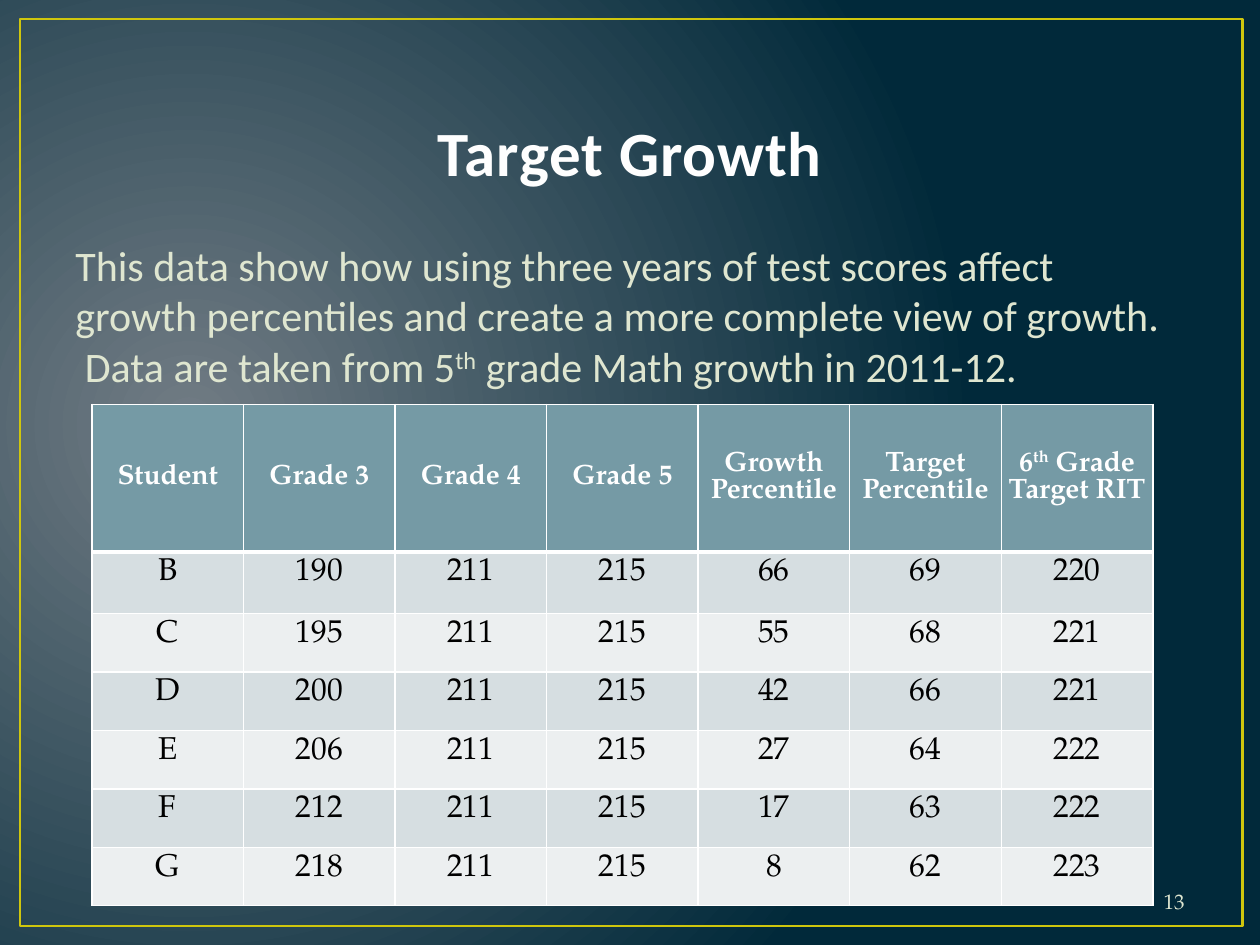
import pptx
import pptx.util
import pptx.dml.color
import pptx.enum.shapes
import pptx.enum.text
import pptx.oxml.ns
import lxml.etree

Inches, Pt = pptx.util.Inches, pptx.util.Pt
ALIGN, ANCHOR = pptx.enum.text.PP_ALIGN, pptx.enum.text.MSO_ANCHOR
qn = pptx.oxml.ns.qn

# A text is a list of (words, is_superscript) runs.
TITLE = [("Target Growth", False)]
INTRO = [
    ("This data show how using three years of test scores affect growth percentiles "
     "and create a more complete view of growth.  Data are taken from 5", False),
    ("th", True),
    (" grade Math growth in 2011-12.", False),
]
PAGE_NUMBER = [("13", False)]
HEADINGS = [[(name, False)] for name in (
    "Student", "Grade 3", "Grade 4", "Grade 5", "Growth Percentile", "Target Percentile")]
HEADINGS.append([("6", False), ("th", True), (" Grade Target RIT", False)])
STUDENTS = [
    ("B", 190, 211, 215, 66, 69, 220),
    ("C", 195, 211, 215, 55, 68, 221),
    ("D", 200, 211, 215, 42, 66, 221),
    ("E", 206, 211, 215, 27, 64, 222),
    ("F", 212, 211, 215, 17, 63, 222),
    ("G", 218, 211, 215, 8, 62, 223),
]

THEME = {
    "glow": "717C84", "night": "01293A", "frame": "CFC60D",
    "title": "FEFEFE", "text": "DFE6D0", "heading": "FFFFFF", "value": "000000",
    "border": "FFFFFF", "heading_fill": "759AA5", "bands": ("D6DEE1", "ECEFF0"),
    "sans": "Calibri", "serif": "TeX Gyre Pagella",
    "title_size": 36, "intro_size": 24, "value_size": 18, "heading_size": 16, "page_size": 12,
}
TABLE_LEFT, TABLE_TOP, TABLE_WIDTH, TABLE_HEIGHT = 0.73, 3.21, 8.42, 3.98
HEADING_HEIGHT, FIRST_ROW_HEIGHT = 1.17, 0.49
CELL_MARGIN = 0.05


def rgb(color):
    return pptx.dml.color.RGBColor.from_string(color)


def add_node(parent, tag, **attributes):
    return lxml.etree.SubElement(parent, qn(tag), attributes)


def write_text(frame, runs, font, size, color, bold=False, align=ALIGN.LEFT,
               anchor=ANCHOR.TOP, tracking=None, line_spacing=None):
    frame.word_wrap = True
    frame.vertical_anchor = anchor
    para = frame.paragraphs[0]
    para.alignment = align
    if line_spacing:
        para.line_spacing = Pt(line_spacing)
    for words, superscript in runs:
        span = para.add_run()
        span.text = words
        span.font.name, span.font.size, span.font.bold = font, Pt(size), bold
        span.font.color.rgb = rgb(color)
        properties = span.font._element
        if superscript:
            properties.set("baseline", "30000")
        if tracking:
            properties.set("spc", str(int(tracking * 100)))


def add_text(page, area, runs, **text_format):
    box = page.shapes.add_textbox(*map(Inches, area))
    write_text(box.text_frame, runs, **text_format)


def paint_background(page):
    """Radial gradient whose bright centre lies left of the middle."""
    page.background.fill.gradient()
    gradient = page.element.find(".//" + qn("a:gradFill"))
    for child in list(gradient):
        gradient.remove(child)
    stops = add_node(gradient, "a:gsLst")
    for position, color in (("0", THEME["glow"]), ("100000", THEME["night"])):
        add_node(add_node(stops, "a:gs", pos=position), "a:srgbClr", val=color)
    circle = add_node(gradient, "a:path", path="circle")
    add_node(circle, "a:fillToRect", l="15000", t="50000", r="85000", b="60000")


def add_frame(page):
    frame = page.shapes.add_shape(pptx.enum.shapes.MSO_SHAPE.RECTANGLE,
                                  *map(Inches, (0.16, 0.15, 9.7, 7.2)))
    frame.shadow.inherit = False
    frame.fill.background()
    frame.line.color.rgb = rgb(THEME["frame"])
    frame.line.width = Pt(1.5)


def draw_borders(cell, top=1, bottom=1):
    properties = cell._tc.get_or_add_tcPr()
    for side, width in (("L", 1), ("R", 1), ("T", top), ("B", bottom)):
        line = add_node(properties, "a:ln" + side, w=str(int(Pt(width))))
        add_node(add_node(line, "a:solidFill"), "a:srgbClr", val=THEME["border"])


def fill_cell(cell, runs, fill, top=1, bottom=1, **text_format):
    draw_borders(cell, top, bottom)
    cell.fill.solid()
    cell.fill.fore_color.rgb = rgb(fill)
    cell.margin_left = cell.margin_right = Inches(CELL_MARGIN)
    cell.margin_top = cell.margin_bottom = Inches(CELL_MARGIN)
    write_text(cell.text_frame, runs, font=THEME["serif"], align=ALIGN.CENTER, **text_format)


def add_score_table(page):
    table = page.shapes.add_table(
        len(STUDENTS) + 1, len(HEADINGS),
        *map(Inches, (TABLE_LEFT, TABLE_TOP, TABLE_WIDTH, TABLE_HEIGHT))).table
    for column in table.columns:
        column.width = Inches(TABLE_WIDTH / len(HEADINGS))
    other_height = (TABLE_HEIGHT - HEADING_HEIGHT - FIRST_ROW_HEIGHT) / (len(STUDENTS) - 1)
    heights = [HEADING_HEIGHT, FIRST_ROW_HEIGHT] + [other_height] * (len(STUDENTS) - 1)
    for row, height in zip(table.rows, heights):
        row.height = Inches(height)

    for column, runs in enumerate(HEADINGS):
        cell = table.cell(0, column)
        fill_cell(cell, runs, THEME["heading_fill"], bottom=3, size=THEME["heading_size"],
                  color=THEME["heading"], bold=True, line_spacing=15.5)
        cell.vertical_anchor = ANCHOR.MIDDLE
    for row, student in enumerate(STUDENTS, start=1):
        for column, value in enumerate(student):
            fill_cell(table.cell(row, column), [(str(value), False)],
                      THEME["bands"][(row - 1) % 2], top=3 if row == 1 else 1,
                      size=THEME["value_size"], color=THEME["value"], line_spacing=18)


def main():
    deck = pptx.Presentation()
    deck.slide_width, deck.slide_height = Inches(10), Inches(7.5)
    page = deck.slides.add_slide(deck.slide_layouts[6])
    paint_background(page)
    add_frame(page)
    add_text(page, (0.5, 0.3, 9, 1.25), TITLE, font=THEME["sans"], size=THEME["title_size"],
             color=THEME["title"], bold=True, align=ALIGN.CENTER, anchor=ANCHOR.BOTTOM,
             tracking=0.5)
    add_text(page, (8.67, 6.95, 0.83, 0.4), PAGE_NUMBER, font=THEME["serif"],
             size=THEME["page_size"], color=THEME["text"], align=ALIGN.RIGHT,
             anchor=ANCHOR.MIDDLE)
    add_score_table(page)
    add_text(page, (0.5, 1.85, 8.83, 1.31), INTRO, font=THEME["sans"],
             size=THEME["intro_size"], color=THEME["text"])
    deck.save("out.pptx")


if __name__ == "__main__":
    main()
